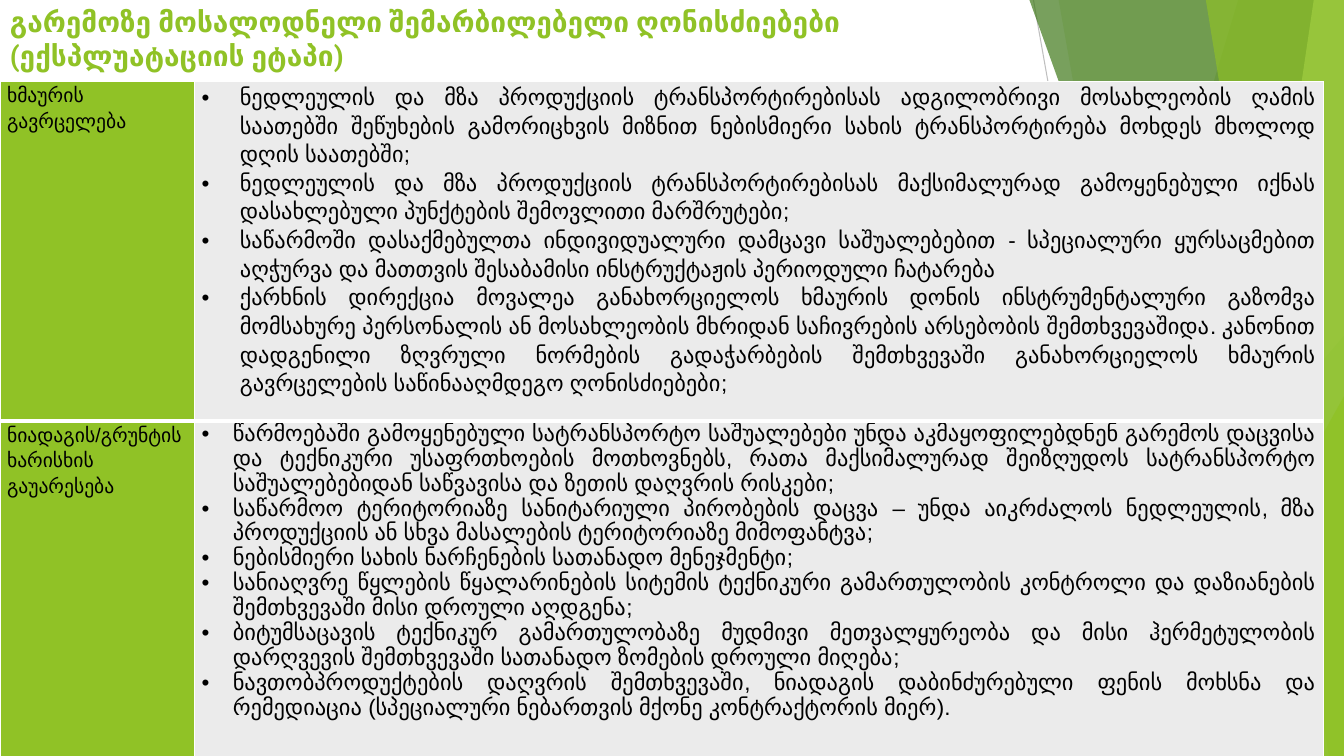
from lxml import etree
from pptx import Presentation
from pptx.dml.color import RGBColor
from pptx.enum.shapes import MSO_CONNECTOR as Connector, MSO_SHAPE as Shape
from pptx.enum.text import MSO_ANCHOR as Anchor, PP_ALIGN as Align
from pptx.oxml.ns import qn
from pptx.util import Inches, Pt

WIDTH, HEIGHT = 13.33, 7.5
GREEN, WHITE, BLACK, GREY = "90C226", "FFFFFF", "000000", "EBEBEB"

TITLE = "გარემოზე მოსალოდნელი შემარბილებელი ღონისძიებები (ექსპლუატაციის ეტაპი)"
NOISE = [
    "ნედლეულის და მზა პროდუქციის ტრანსპორტირებისას ადგილობრივი მოსახლეობის ღამის საათებში შეწუხების გამორიცხვის მიზნით ნებისმიერი სახის ტრანსპორტირება მოხდეს მხოლოდ დღის საათებში;",
    "ნედლეულის და მზა პროდუქციის ტრანსპორტირებისას მაქსიმალურად გამოყენებული იქნას დასახლებული პუნქტების შემოვლითი მარშრუტები;",
    "საწარმოში დასაქმებულთა ინდივიდუალური დამცავი საშუალებებით - სპეციალური ყურსაცმებით აღჭურვა და მათთვის შესაბამისი ინსტრუქტაჟის პერიოდული ჩატარება",
    "ქარხნის დირექცია მოვალეა განახორციელოს ხმაურის დონის ინსტრუმენტალური გაზომვა მომსახურე პერსონალის ან მოსახლეობის მხრიდან საჩივრების არსებობის შემთხვევაშიდა. კანონით დადგენილი ზღვრული ნორმების გადაჭარბების შემთხვევაში განახორციელოს ხმაურის გავრცელების საწინააღმდეგო ღონისძიებები;",
]
SOIL = [
    "წარმოებაში გამოყენებული სატრანსპორტო საშუალებები უნდა აკმაყოფილებდნენ გარემოს დაცვისა და ტექნიკური უსაფრთხოების მოთხოვნებს, რათა მაქსიმალურად შეიზღუდოს სატრანსპორტო საშუალებებიდან საწვავისა და ზეთის დაღვრის რისკები;",
    "საწარმოო ტერიტორიაზე სანიტარიული პირობების დაცვა – უნდა აიკრძალოს ნედლეულის, მზა პროდუქციის ან სხვა მასალების ტერიტორიაზე მიმოფანტვა;",
    "ნებისმიერი სახის ნარჩენების სათანადო მენეჯმენტი;",
    "სანიაღვრე წყლების წყალარინების სიტემის ტექნიკური გამართულობის კონტროლი და დაზიანების შემთხვევაში მისი დროული აღდგენა;",
    "ბიტუმსაცავის ტექნიკურ გამართულობაზე მუდმივი მეთვალყურეობა და მისი ჰერმეტულობის დარღვევის შემთხვევაში სათანადო ზომების დროული მიღება;",
    "ნავთობპროდუქტების დაღვრის შემთხვევაში, ნიადაგის დაბინძურებული ფენის მოხსნა და რემედიაცია (სპეციალური ნებართვის მქონე კონტრაქტორის მიერ).",
]
# heading, measures, hanging indent, line spacing of the measures, bottom border width
ROWS = [
    ("ხმაურის გავრცელება", NOISE, 0.38, 1.15, 3),
    ("ნიადაგის/გრუნტის  ხარისხის გაუარესება", SOIL, 0.31, 1.0, 1),
]


def rgb(color):
    return RGBColor.from_string(color)


def paint(shape, color, opacity):
    """Fill a shape with a see-through colour, without outline or shadow."""
    shape.shadow.inherit = False
    shape.fill.solid()
    shape.fill.fore_color.rgb = rgb(color)
    shape.line.fill.background()
    tint = shape.fill._xPr.find(qn("a:solidFill"))[0]
    etree.SubElement(tint, qn("a:alpha"), val=str(opacity * 1000))


def add_ray(page, start, end, color):
    ray = page.shapes.add_connector(Connector.STRAIGHT, *map(Inches, start + end))
    ray.line.color.rgb = rgb(color)
    ray.line.width = Pt(0.75)
    etree.SubElement(ray._element.spPr, qn("a:effectLst"))


def add_band(page, top_left, bottom_left, color, opacity):
    """Add a full-height band that reaches the right edge of the page."""
    corners = [(top_left, 0), (WIDTH, 0), (WIDTH, HEIGHT), (bottom_left, HEIGHT)]
    points = [(Inches(x), Inches(y)) for x, y in corners]
    builder = page.shapes.build_freeform(*points[0])
    builder.add_line_segments(points[1:], close=True)
    paint(builder.convert_to_shape(), color, opacity)


def add_corner(page, left, top, width, apex, color, opacity):
    """Add a triangle that stands on the bottom edge of the page."""
    corner = page.shapes.add_shape(
        Shape.ISOSCELES_TRIANGLE, *map(Inches, (left, top, width, HEIGHT - top)))
    corner.adjustments[0] = apex
    paint(corner, color, opacity)


def add_backdrop(page):
    add_ray(page, (10.25, 0), (11.58, HEIGHT), "BFBFBF")
    add_ray(page, (WIDTH, 4.03), (8.12, HEIGHT), "D9D9D9")
    add_band(page, 12.28, 10.04, GREEN, 30)
    add_band(page, 10.5, 11.83, GREEN, 20)
    add_corner(page, 9.77, 3.33, 3.56, 1, "54A021", 72)
    add_band(page, 10.21, 12.91, "3F7819", 70)
    add_band(page, 13.03, 11.92, "C0E474", 70)
    add_band(page, 11.96, 13.18, GREEN, 65)
    add_corner(page, 11.34, 3.93, 1.99, 1, GREEN, 80)
    add_corner(page, 0, 4.39, 0.49, 0, GREEN, 85)


def add_title(page, left, top, width, height):
    box = page.shapes.add_textbox(*map(Inches, (left, top, width, height)))
    frame = box.text_frame
    frame.word_wrap = True
    frame.vertical_anchor = Anchor.TOP
    para = frame.paragraphs[0]
    para.text = TITLE
    font = para.font
    font.name, font.size, font.bold = "Roboto", Pt(20), True
    font.color.rgb = rgb(GREEN)


def set_borders(cell, widths):
    """Draw white borders; widths holds points by side: L, R, T, B."""
    props = cell._tc.get_or_add_tcPr()
    for index, (side, width) in enumerate(widths.items()):
        border = etree.Element(qn(f"a:ln{side}"), w=str(Pt(width)))
        fill = etree.SubElement(border, qn("a:solidFill"))
        etree.SubElement(fill, qn("a:srgbClr"), val=WHITE)
        props.insert(index, border)


def add_bullet(para, indent):
    props = para._p.get_or_add_pPr()
    props.set("marL", str(Inches(indent)))
    props.set("indent", str(-Inches(indent)))
    etree.SubElement(props, qn("a:buFont"), typeface="Arial")
    etree.SubElement(props, qn("a:buChar"), char="•")


def fill_cell(cell, lines, color, size, spacing, indent=0):
    cell.fill.solid()
    cell.fill.fore_color.rgb = rgb(color)
    cell.margin_left = cell.margin_right = Inches(0.07)
    cell.margin_top = cell.margin_bottom = 0
    frame = cell.text_frame
    for index, line in enumerate(lines):
        para = frame.add_paragraph() if index else frame.paragraphs[0]
        para.text = line
        para.line_spacing = spacing
        para.font.name, para.font.size = "Arial", Pt(size)
        para.font.color.rgb = rgb(BLACK)
        if indent:
            para.alignment = Align.JUSTIFY
            add_bullet(para, indent)


def add_measures(page, left, top, width, height):
    frame = page.shapes.add_table(
        len(ROWS), 2, *map(Inches, (left, top, width, height)))
    table = frame.table
    table.first_row = table.horz_banding = False
    heading_width, last_height = 1.93, 3.33
    table.columns[0].width = Inches(heading_width)
    table.columns[1].width = Inches(width - heading_width)
    table.rows[0].height = Inches(height - last_height)
    table.rows[1].height = Inches(last_height)
    above = 1
    for index, (heading, measures, indent, spacing, below) in enumerate(ROWS):
        heading_cell, measures_cell = table.cell(index, 0), table.cell(index, 1)
        fill_cell(heading_cell, [heading], GREEN, 14, 1.15)
        fill_cell(measures_cell, measures, GREY, 16, spacing, indent)
        for cell in (heading_cell, measures_cell):
            set_borders(cell, {"L": 1, "R": 1, "T": above, "B": below})
        above = below


def main():
    deck = Presentation()
    deck.slide_width, deck.slide_height = Inches(WIDTH), Inches(HEIGHT)
    page = deck.slides.add_slide(deck.slide_layouts[6])
    add_backdrop(page)
    add_title(page, 0, 0, 10.57, 0.55)
    add_measures(page, 0, 0.81, 13.13, 6.19)
    deck.save("out.pptx")


if __name__ == "__main__":
    main()
